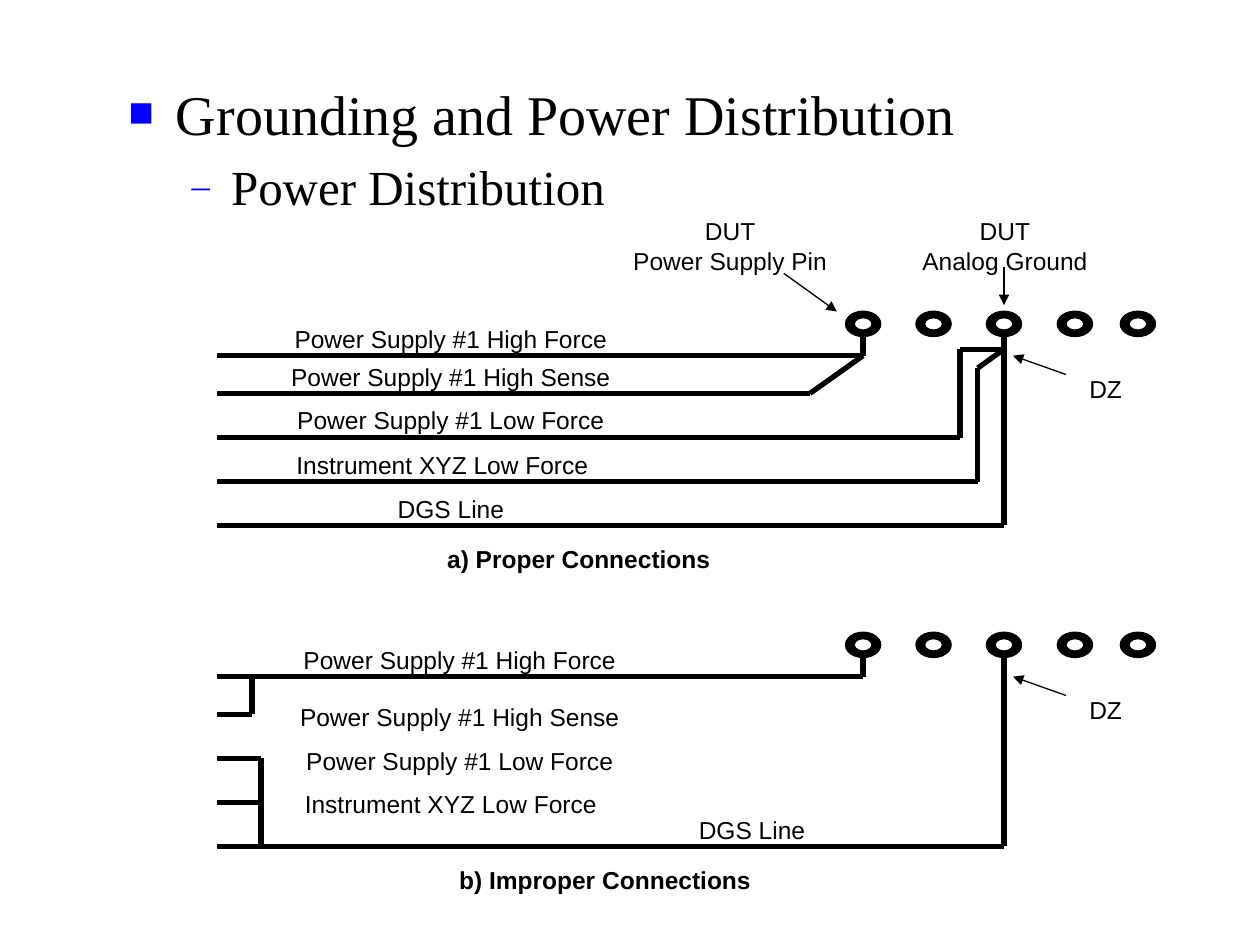
from itertools import pairwise

from pptx import Presentation
from pptx.dml.color import RGBColor
from pptx.enum.shapes import MSO_CONNECTOR as Connector, MSO_SHAPE as Shape
from pptx.enum.text import MSO_ANCHOR as Anchor, MSO_AUTO_SIZE as AutoSize, PP_ALIGN as Align
from pptx.oxml.ns import qn
from pptx.util import Cm, Pt
from lxml.etree import SubElement

COLORS = {"ink": "000000", "paper": "FFFFFF", "bullet": "0000FF"}

# text, level, size, bullet
OUTLINE = [
    ("Grounding and Power Distribution", 0, 32, "■"),
    ("Power Distribution", 1, 28, "–"),
]

# All lengths in cm; heights within a diagram count from its row of pads.
LEFT, POWER_PIN, GROUND_PIN = 4.37, 17.4, 20.24
PADS = [POWER_PIN, 18.82, GROUND_PIN, 21.67, 22.94]
HIGH_FORCE, HIGH_SENSE, LOW_FORCE, INSTRUMENT, DGS = 0.64, 1.4, 2.29, 3.18, 4.06
PAD_EDGE, JOINT = 0.25, 0.51
LABEL_WIDTH, LABEL_HEIGHT = 9.45, 1.14

# Every wire is a list of corner points.
SHARED_WIRES = [
    [(LEFT, HIGH_FORCE), (POWER_PIN, HIGH_FORCE), (POWER_PIN, PAD_EDGE)],
    [(LEFT, DGS), (GROUND_PIN, DGS), (GROUND_PIN, PAD_EDGE)],
]
DZ_ARROW = [(21.49, 1.02), (20.42, HIGH_FORCE)]
DZ_LABEL = ("DZ", 22.29, 0.89)

# Labels: text, centre, top
DIAGRAMS = [
    {
        "pad_row": 6.53,
        "wires": [
            [(LEFT, HIGH_SENSE), (16.33, HIGH_SENSE), (POWER_PIN, HIGH_FORCE)],
            [(LEFT, LOW_FORCE), (19.35, LOW_FORCE), (19.35, JOINT), (GROUND_PIN, JOINT)],
            [(LEFT, INSTRUMENT), (19.71, INSTRUMENT), (19.71, 0.89), (GROUND_PIN, JOINT)],
        ],
        "arrows": [
            [(15.8, -1.02), (16.87, -0.25)],
            [(GROUND_PIN, -1.14), (GROUND_PIN, -0.38)],
        ],
        "labels": [
            ("DUT\nPower Supply Pin", 14.72, -2.29),
            ("DUT\nAnalog Ground", 20.26, -2.29),
            ("Power Supply #1 High Force", 9.09, -0.13),
            ("Power Supply #1 High Sense", 9.09, 0.64),
            ("Power Supply #1 Low Force", 9.09, 1.52),
            ("Instrument XYZ Low Force", 8.92, 2.41),
            ("DGS Line", 9.09, 3.3),
        ],
        "caption": ("a) Proper Connections", 11.67, 4.32),
    },
    {
        "pad_row": 13.0,
        "wires": [
            [(LEFT, HIGH_SENSE), (5.08, HIGH_SENSE), (5.08, HIGH_FORCE)],
            [(LEFT, LOW_FORCE), (5.26, LOW_FORCE), (5.26, DGS)],
            [(LEFT, INSTRUMENT), (5.26, INSTRUMENT)],
        ],
        "arrows": [],
        "labels": [
            ("Power Supply #1 High Force", 9.27, -0.13),
            ("Power Supply #1 High Sense", 9.27, 1.02),
            ("Power Supply #1 Low Force", 9.27, 1.91),
            ("Instrument XYZ Low Force", 9.09, 2.79),
            ("DGS Line", 15.16, 3.3),
        ],
        "caption": ("b) Improper Connections", 12.2, 4.32),
    },
]


def color(name):
    return RGBColor.from_string(COLORS[name])


def style_run(run, font, size, bold=False):
    run.font.name = font
    run.font.size = Pt(size)
    run.font.bold = bold
    run.font.color.rgb = color("ink")


def set_bullet(para, char):
    props = para._p.get_or_add_pPr()
    SubElement(SubElement(props, qn("a:buClr")), qn("a:srgbClr"), val=COLORS["bullet"])
    SubElement(props, qn("a:buSzPct"), val="75000")
    SubElement(props, qn("a:buFont"), typeface="Times New Roman")
    SubElement(props, qn("a:buChar"), char=char)


def fill_outline(slide):
    title, body = slide.shapes.title, slide.placeholders[1]
    title.element.getparent().remove(title.element)
    body.left, body.top, body.width, body.height = Cm(2.34), Cm(1.47), Cm(21.59), Cm(11.43)
    frame = body.text_frame
    frame.auto_size = AutoSize.NONE
    frame.vertical_anchor = Anchor.TOP
    frame.text = "\n".join(text for text, *_ in OUTLINE)
    for para, (_, level, size, char) in zip(frame.paragraphs, OUTLINE):
        para.level = level
        set_bullet(para, char)
        style_run(para.runs[0], "Times New Roman", size)


def add_line(slide, start, end, pad_row, weight, arrow=False):
    (x1, y1), (x2, y2) = start, end
    line = slide.shapes.add_connector(
        Connector.STRAIGHT, Cm(x1), Cm(pad_row + y1), Cm(x2), Cm(pad_row + y2))
    line.line.color.rgb = color("ink")
    line.line.width = Pt(weight)
    if arrow:
        SubElement(line.line._get_or_add_ln(), qn("a:tailEnd"), type="triangle")
    SubElement(line._element.spPr, qn("a:effectLst"))


def add_pad(slide, center, pad_row):
    for width, height, fill in [(0.71, 0.51, "ink"), (0.36, 0.25, "paper")]:
        oval = slide.shapes.add_shape(
            Shape.OVAL, Cm(center - width / 2), Cm(pad_row - height / 2), Cm(width), Cm(height))
        oval.shadow.inherit = False
        oval.fill.solid()
        oval.fill.fore_color.rgb = color(fill)
        oval.line.color.rgb = color("ink")
        oval.line.width = Pt(0.75)


def add_label(slide, label, pad_row, bold=False):
    text, center, top = label
    box = slide.shapes.add_textbox(
        Cm(center - LABEL_WIDTH / 2), Cm(pad_row + top), Cm(LABEL_WIDTH), Cm(LABEL_HEIGHT))
    frame = box.text_frame
    frame.word_wrap = True
    frame.text = text
    for para in frame.paragraphs:
        para.alignment = Align.CENTER
        style_run(para.runs[0], "Arial", 14, bold)


def draw_diagram(slide, diagram):
    pad_row = diagram["pad_row"]
    for wire in SHARED_WIRES + diagram["wires"]:
        for start, end in pairwise(wire):
            add_line(slide, start, end, pad_row, 3)
    for center in PADS:
        add_pad(slide, center, pad_row)
    for start, end in diagram["arrows"] + [DZ_ARROW]:
        add_line(slide, start, end, pad_row, 0.75, arrow=True)
    for label in diagram["labels"] + [DZ_LABEL]:
        add_label(slide, label, pad_row)
    add_label(slide, diagram["caption"], pad_row, bold=True)


def main():
    deck = Presentation()
    deck.slide_width, deck.slide_height = Cm(25.4), Cm(19.05)
    slide = deck.slides.add_slide(deck.slide_layouts.get_by_name("Title and Content"))
    fill_outline(slide)
    for diagram in DIAGRAMS:
        draw_diagram(slide, diagram)
    deck.save("out.pptx")


if __name__ == "__main__":
    main()
